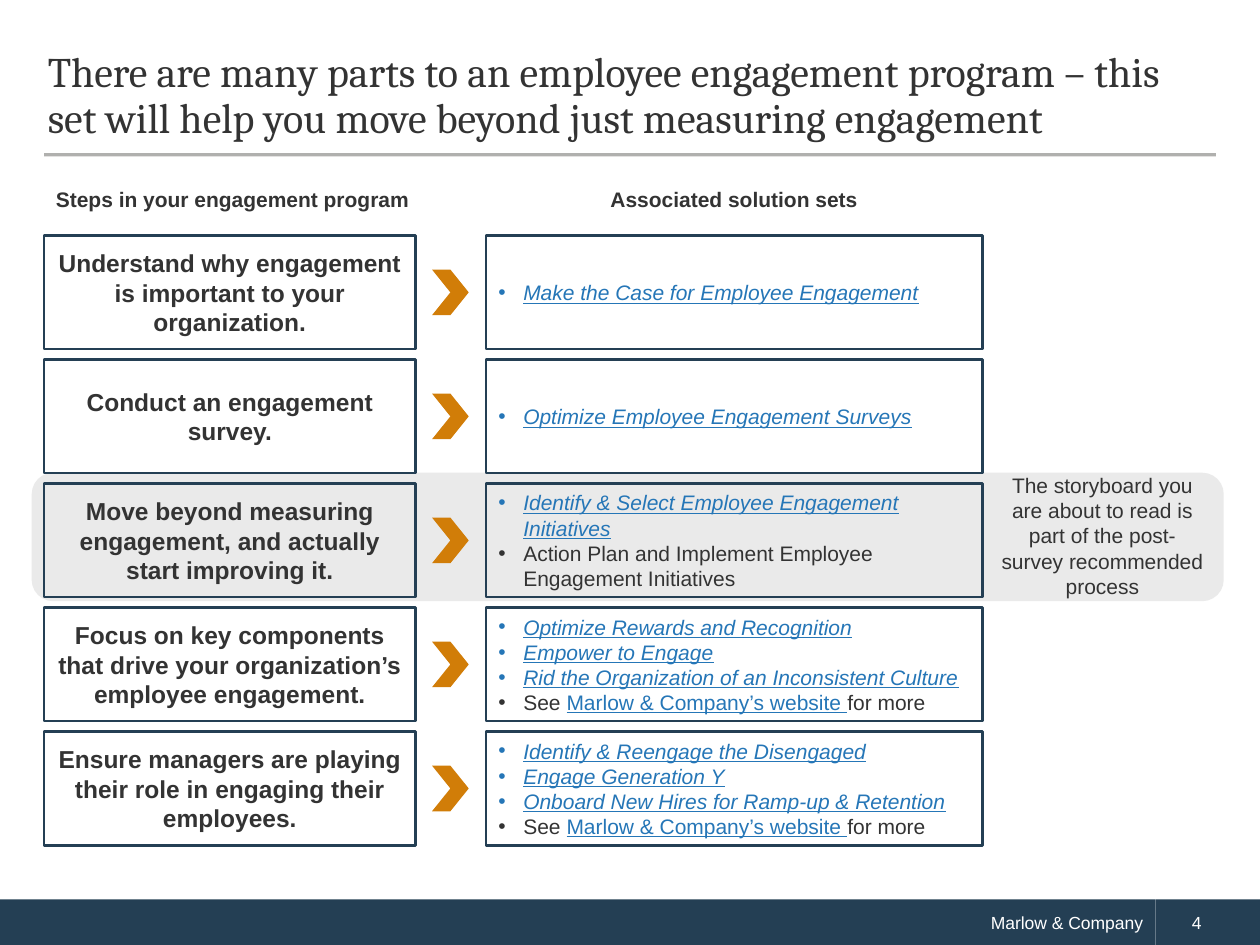
"""Builds the slide that links engagement program steps to solution sets."""
import pptx
import pptx.util
import pptx.dml.color
import pptx.enum.shapes
import pptx.enum.text
import pptx.oxml
import pptx.oxml.ns

Cm, Pt = pptx.util.Cm, pptx.util.Pt
PRESET = pptx.enum.shapes.MSO_SHAPE
ALIGN = pptx.enum.text.PP_ALIGN
ANCHOR = pptx.enum.text.MSO_ANCHOR

NAVY, ORANGE, INK, LINK, WHITE = "243F54", "D17D08", "333333", "2576B7", "FFFFFF"
COMPANY = "Marlow & Company"
TITLE = ("There are many parts to an employee engagement program – this set "
         "will help you move beyond just measuring engagement")
NOTE = "The storyboard you are about to read is part of the post-survey recommended process"
HEADINGS = [("Steps in your engagement program", 0.79), ("Associated solution sets", 10.9)]

RUN_STYLES = {
    "set": {"color": LINK, "italic": True, "underline": True},
    "link": {"color": LINK, "underline": True},
    "plain": {"color": INK},
}
SEE_MORE = [("See ", "plain"), (f"{COMPANY}’s website ", "link"), ("for more", "plain")]
STEPS = [
    ("Understand why engagement is important to your organization.",
     [[("Make the Case for Employee Engagement", "set")]]),
    ("Conduct an engagement survey.",
     [[("Optimize Employee Engagement Surveys", "set")]]),
    ("Move beyond measuring engagement, and actually start improving it.",
     [[("Identify & Select Employee Engagement Initiatives", "set")],
      [("Action Plan and Implement Employee Engagement Initiatives", "plain")]]),
    ("Focus on key components that drive your organization’s employee engagement.",
     [[("Optimize Rewards and Recognition", "set")],
      [("Empower to Engage", "set")],
      [("Rid the Organization of an Inconsistent Culture", "set")],
      SEE_MORE]),
    ("Ensure managers are playing their role in engaging their employees.",
     [[("Identify & Reengage the Disengaged", "set")],
      [("Engage Generation Y", "set")],
      [("Onboard New Hires for Ramp-up & Retention", "set")],
      SEE_MORE]),
]

ROW_TOP, ROW_PITCH, ROW_HEIGHT = 4.75, 2.5, 2.29
STEP_LEFT, STEP_WIDTH = 0.89, 7.49
SETS_LEFT, SETS_WIDTH = 9.8, 10.01
ARROW_LEFT, ARROW_WIDTH, ARROW_HEIGHT = 8.71, 0.74, 0.92


def paint(color_format, color, opacity=None):
    color_format.rgb = pptx.dml.color.RGBColor.from_string(color)


def make_transparent(owner, percent):
    for color in owner.iter(pptx.oxml.ns.qn("a:srgbClr")):
        alpha = color.makeelement(pptx.oxml.ns.qn("a:alpha"), {"val": str(percent * 1000)})
        color.append(alpha)


def style_run(run, size, color=INK, font="Arial", bold=False, italic=False, underline=False):
    run.font.name, run.font.size = font, Pt(size)
    run.font.bold, run.font.italic, run.font.underline = bold, italic, underline
    paint(run.font.color, color)


def write(frame, text, size, align=ALIGN.CENTER, **style):
    frame.word_wrap = True
    frame.text = text
    frame.paragraphs[0].alignment = align
    style_run(frame.paragraphs[0].runs[0], size, **style)


def add_box(slide, preset, left, top, width, height, fill=None, outline=None):
    box = slide.shapes.add_shape(preset, Cm(left), Cm(top), Cm(width), Cm(height))
    box.shadow.inherit = False
    if fill:
        box.fill.solid()
        paint(box.fill.fore_color, fill)
    else:
        box.fill.background()
    if outline:
        paint(box.line.color, outline)
        box.line.width = Pt(1.5)
    else:
        box.line.fill.background()
    box.text_frame.vertical_anchor = ANCHOR.MIDDLE
    return box


def add_label(slide, text, left, top, width, height, **style):
    label = slide.shapes.add_textbox(Cm(left), Cm(top), Cm(width), Cm(height))
    write(label.text_frame, text, 12, **style)


def write_bullets(frame, items):
    frame.word_wrap = True
    for index, item in enumerate(items):
        paragraph = frame.add_paragraph() if index else frame.paragraphs[0]
        paragraph.alignment = ALIGN.LEFT
        properties = paragraph._p.get_or_add_pPr()
        properties.set("marL", str(Cm(0.5)))
        properties.set("indent", str(-Cm(0.5)))
        properties.append(pptx.oxml.parse_xml(
            f'<a:buFont {pptx.oxml.ns.nsdecls("a")} typeface="Arial"/>'))
        properties.append(pptx.oxml.parse_xml(
            f'<a:buChar {pptx.oxml.ns.nsdecls("a")} char="•"/>'))
        for text, style in item:
            run = paragraph.add_run()
            run.text = text
            style_run(run, 12, **RUN_STYLES[style])


def add_title(slide):
    title = slide.shapes.title
    title.left, title.top, title.width, title.height = Cm(0.71), Cm(0.74), Cm(23.95), Cm(2.39)
    title.text_frame.auto_size = pptx.enum.text.MSO_AUTO_SIZE.NONE
    title.text_frame.vertical_anchor = ANCHOR.MIDDLE
    write(title.text_frame, TITLE, 24, ALIGN.LEFT, font="Cambria")
    title.text_frame.paragraphs[0].line_spacing = Pt(26)
    rule = slide.shapes.add_connector(
        pptx.enum.shapes.MSO_CONNECTOR.STRAIGHT, Cm(0.89), Cm(3.12), Cm(24.51), Cm(3.12))
    paint(rule.line.color, "45433E")
    rule.line.width = Pt(1.75)
    properties = rule._element.spPr
    make_transparent(properties, 42)
    properties.append(properties.makeelement(pptx.oxml.ns.qn("a:effectLst"), {}))


def add_footer(slide):
    company = add_box(slide, PRESET.RECTANGLE, 0, 18.13, 23.29, 0.92, NAVY)
    write(company.text_frame, COMPANY, 10, ALIGN.RIGHT, color=WHITE)
    number = add_box(slide, PRESET.RECTANGLE, 23.29, 18.13, 2.11, 0.92, NAVY)
    number.text_frame.margin_left = Cm(0.74)
    write(number.text_frame, "4", 10, ALIGN.LEFT, color=WHITE)


def add_steps(slide):
    for row, (step, solution_sets) in enumerate(STEPS):
        top = ROW_TOP + row * ROW_PITCH
        step_box = add_box(slide, PRESET.RECTANGLE, STEP_LEFT, top, STEP_WIDTH, ROW_HEIGHT,
                           outline=NAVY)
        write(step_box.text_frame, step, 14, bold=True)
        add_box(slide, PRESET.CHEVRON, ARROW_LEFT, top + (ROW_HEIGHT - ARROW_HEIGHT) / 2,
                ARROW_WIDTH, ARROW_HEIGHT, ORANGE)
        sets_box = add_box(slide, PRESET.RECTANGLE, SETS_LEFT, top, SETS_WIDTH, ROW_HEIGHT,
                           outline=NAVY)
        write_bullets(sets_box.text_frame, solution_sets)


def main():
    deck = pptx.Presentation()
    deck.slide_width, deck.slide_height = Cm(25.4), Cm(19.05)
    slide = deck.slides.add_slide(deck.slide_layouts[5])
    add_footer(slide)
    add_title(slide)
    highlight = add_box(slide, PRESET.ROUNDED_RECTANGLE, 0.64, 9.53, 24.03, 2.59, "D9D9D9")
    make_transparent(highlight._element.spPr, 55)
    add_steps(slide)
    add_label(slide, NOTE, 19.94, 9.4, 4.57, 2.82)
    for heading, left in HEADINGS:
        add_label(slide, heading, left, 3.63, 7.8, 0.76, bold=True)
    deck.save("out.pptx")


if __name__ == "__main__":
    main()
